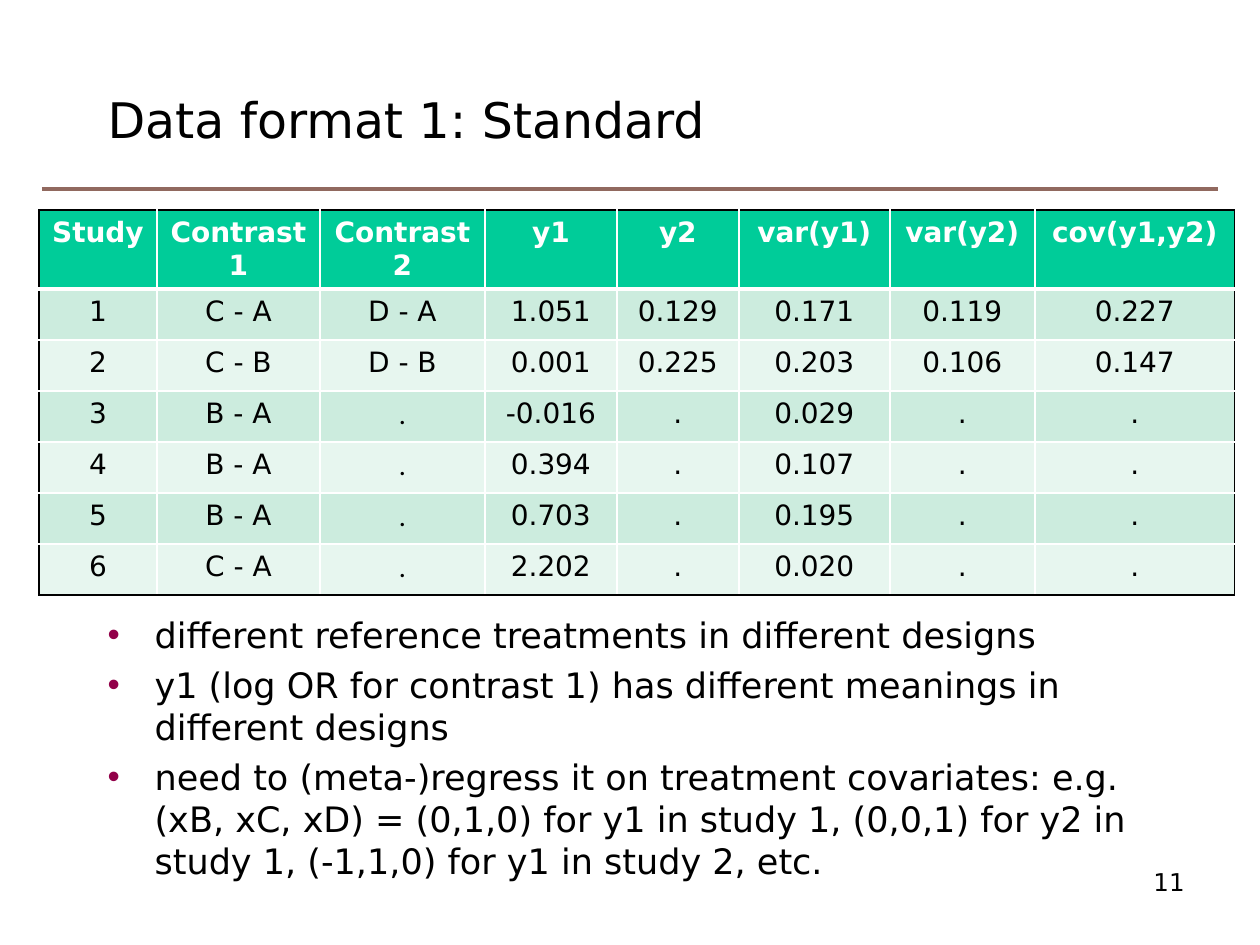
from dataclasses import dataclass

from lxml.etree import SubElement
from pptx import Presentation
from pptx.dml.color import RGBColor
from pptx.enum.shapes import MSO_CONNECTOR
from pptx.enum.text import MSO_ANCHOR, MSO_AUTO_SIZE, PP_ALIGN
from pptx.oxml.ns import qn
from pptx.util import Emu, Pt

TITLE = "Data format 1: Standard"
HEADER = ["Study", "Contrast 1", "Contrast 2", "y1", "y2", "var(y1)", "var(y2)", "cov(y1,y2)"]
STUDIES = [
    ["1", "C - A", "D - A", "1.051", "0.129", "0.171", "0.119", "0.227"],
    ["2", "C - B", "D - B", "0.001", "0.225", "0.203", "0.106", "0.147"],
    ["3", "B - A", ".", "-0.016", ".", "0.029", ".", "."],
    ["4", "B - A", ".", "0.394", ".", "0.107", ".", "."],
    ["5", "B - A", ".", "0.703", ".", "0.195", ".", "."],
    ["6", "C - A", ".", "2.202", ".", "0.020", ".", "."],
]
BULLETS = [
    "different reference treatments in different designs",
    "y1 (log OR for contrast 1) has different meanings in different designs",
    "need to (meta-)regress it on treatment covariates: e.g. (xB, xC, xD) = (0,1,0) for y1 "
    "in study 1, (0,0,1) for y2 in study 1, (-1,1,0) for y1 in study 2, etc.",
]
PAGE_NUMBER = "11"

PAGE_SIZE = (1260, 945)
TITLE_BOX = (95, 63, 1079, 112)
RULE_LEFT, RULE_RIGHT, RULE_Y = 42, 1218, 189
TABLE_LEFT, TABLE_TOP = 39, 210
COLUMN_WIDTHS = [118, 163, 165, 132, 122, 151, 145, 200]
HEADER_HEIGHT, ROW_HEIGHT = 79, 51
CELL_MARGIN_X, CELL_MARGIN_Y = 10, 7
BULLET_BOX = (95, 607, 1071, 281)
BULLET_INDENT = 47
NUMBER_BOX = (903, 861, 294, 66)


@dataclass(frozen=True)
class Theme:
    font: str = "DejaVu Sans"
    dot_font: str = "Calibri"
    ink: str = "000000"
    paper: str = "FFFFFF"
    rule: str = "91695F"
    header: str = "00CC99"
    bands: tuple = ("CCECDE", "E7F6EF")
    bullet: str = "920049"
    title_size: int = 28
    body_size: int = 20
    table_size: int = 16
    number_size: int = 14
    bullet_gap: float = 4.6


THEME = Theme()


def px(length):
    return Emu(round(length * 914400 / 126))


def place(box, bounds):
    box.left, box.top, box.width, box.height = map(px, bounds)


def write(paragraph, text, *, size, color=THEME.ink, font=THEME.font, bold=False,
          align=PP_ALIGN.LEFT):
    paragraph.alignment = align
    span = paragraph.add_run()
    span.text = text
    span.font.name, span.font.size, span.font.bold = font, Pt(size), bold
    span.font.color.rgb = RGBColor.from_string(color)


def add_bullet(paragraph):
    properties = paragraph._p.get_or_add_pPr()
    properties.set("marL", str(px(BULLET_INDENT)))
    properties.set("indent", str(-px(BULLET_INDENT)))
    color = SubElement(properties, qn("a:buClr"))
    SubElement(color, qn("a:srgbClr"), val=THEME.bullet)
    SubElement(properties, qn("a:buChar"), char="•")


def add_border(cell, side, color, points):
    line = SubElement(cell._tc.get_or_add_tcPr(), qn(f"a:ln{side}"), w=str(Pt(points)))
    fill = SubElement(line, qn("a:solidFill"))
    SubElement(fill, qn("a:srgbClr"), val=color)


def add_title(page):
    box = page.shapes.title
    place(box, TITLE_BOX)
    box.text_frame.auto_size = MSO_AUTO_SIZE.NONE
    box.text_frame.vertical_anchor = MSO_ANCHOR.MIDDLE
    write(box.text_frame.paragraphs[0], TITLE, size=THEME.title_size)


def add_rule(page):
    rule = page.shapes.add_connector(MSO_CONNECTOR.STRAIGHT, px(RULE_LEFT), px(RULE_Y),
                                     px(RULE_RIGHT), px(RULE_Y))
    rule.line.color.rgb = RGBColor.from_string(THEME.rule)
    rule.line.width = Pt(1.75)
    SubElement(rule._element.spPr, qn("a:effectLst"))


def add_study_table(page):
    rows = [HEADER] + STUDIES
    heights = [HEADER_HEIGHT] + [ROW_HEIGHT] * len(STUDIES)
    table = page.shapes.add_table(len(rows), len(HEADER), px(TABLE_LEFT), px(TABLE_TOP),
                                  px(sum(COLUMN_WIDTHS)), px(sum(heights))).table
    for column, width in zip(table.columns, COLUMN_WIDTHS):
        column.width = px(width)
    for row, height in zip(table.rows, heights):
        row.height = px(height)

    last_row, last_column = len(rows) - 1, len(HEADER) - 1
    for r, row in enumerate(rows):
        for c, text in enumerate(row):
            cell = table.cell(r, c)
            is_header = r == 0
            cell.margin_left = cell.margin_right = px(CELL_MARGIN_X)
            cell.margin_top = cell.margin_bottom = px(CELL_MARGIN_Y)
            outer_edges = {"L": c == 0, "R": c == last_column, "T": is_header, "B": r == last_row}
            for side, is_outer in outer_edges.items():
                under_header = (side, r) in (("B", 0), ("T", 1))
                add_border(cell, side, THEME.ink if is_outer else THEME.paper,
                           3 if under_header else 1)
            cell.fill.solid()
            cell.fill.fore_color.rgb = RGBColor.from_string(
                THEME.header if is_header else THEME.bands[(r - 1) % 2])
            missing_contrast = c == 2 and text == "."
            write(cell.text_frame.paragraphs[0], text, size=THEME.table_size, bold=is_header,
                  color=THEME.paper if is_header else THEME.ink, align=PP_ALIGN.CENTER,
                  font=THEME.dot_font if missing_contrast else THEME.font)


def add_bullets(page):
    box = page.placeholders[1]
    place(box, BULLET_BOX)
    frame = box.text_frame
    frame.auto_size = MSO_AUTO_SIZE.NONE
    frame.vertical_anchor = MSO_ANCHOR.TOP
    for index, text in enumerate(BULLETS):
        paragraph = frame.add_paragraph() if index else frame.paragraphs[0]
        add_bullet(paragraph)
        paragraph.space_before = Pt(THEME.bullet_gap if index else 0)
        write(paragraph, text, size=THEME.body_size)


def add_page_number(page):
    frame = page.shapes.add_textbox(*map(px, NUMBER_BOX)).text_frame
    frame.word_wrap = True
    write(frame.paragraphs[0], PAGE_NUMBER, size=THEME.number_size, align=PP_ALIGN.RIGHT)


def main():
    deck = Presentation()
    deck.slide_width, deck.slide_height = map(px, PAGE_SIZE)
    page = deck.slides.add_slide(deck.slide_layouts[1])
    add_title(page)
    add_rule(page)
    add_study_table(page)
    add_bullets(page)
    add_page_number(page)
    deck.save("out.pptx")


if __name__ == "__main__":
    main()
